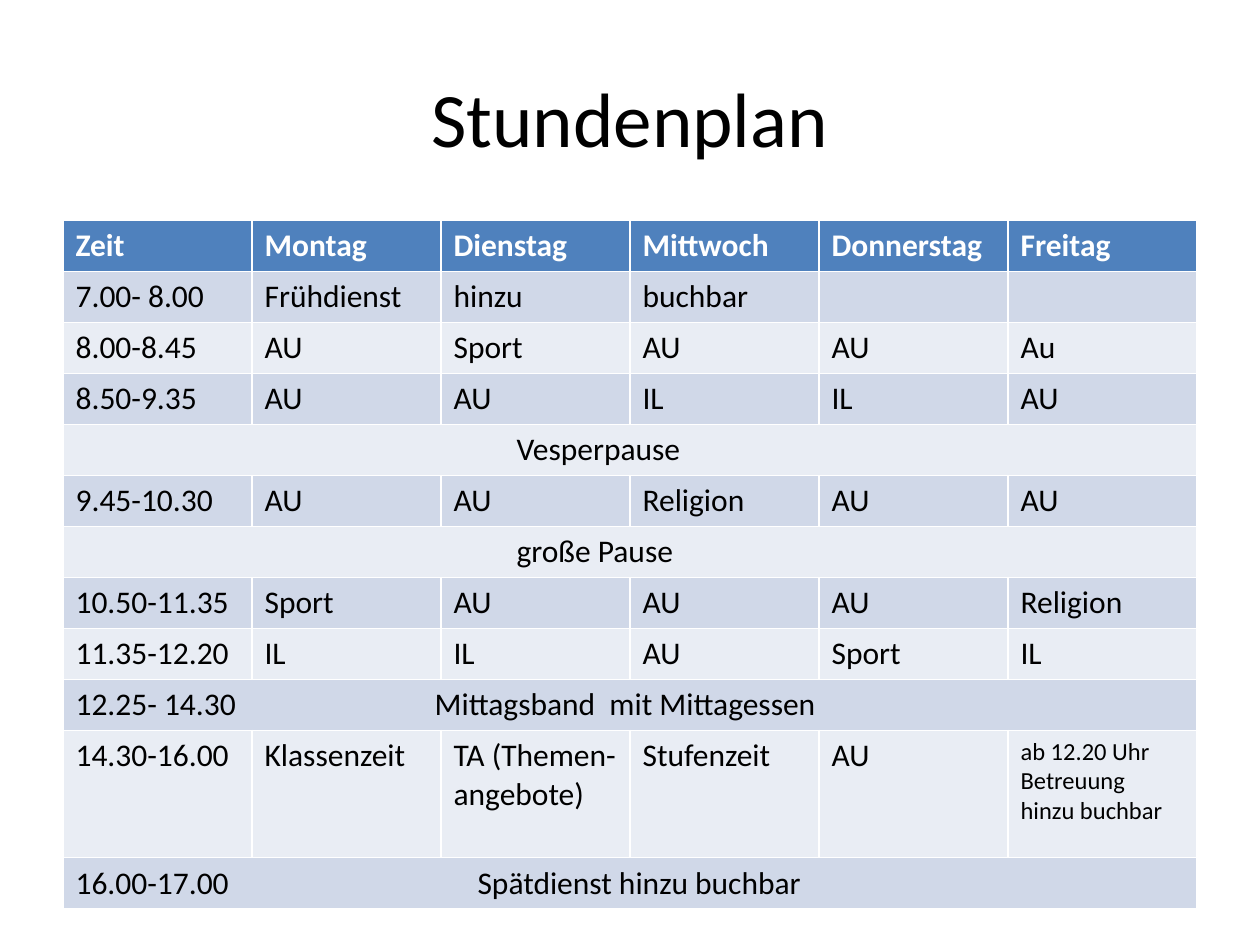
from lxml import etree
from pptx import Presentation
from pptx import util as u
from pptx.dml.color import RGBColor
from pptx.enum import text
from pptx.oxml.ns import qn

WIDTH, HEIGHT = 10, 7.5
FONT = "Calibri"
COLORS = {
    "header": "4F81BD",
    "dark_band": "D0D8E8",
    "light_band": "E9EDF4",
    "ink": "000000",
    "white": "FFFFFF",
}
ROW_HEIGHT, TALL_ROW_HEIGHT = 0.405, 1.01
TALL_ROW = 10
SMALL_NOTE = "ab 12.20 Uhr Betreuung hinzu buchbar"

DAYS = ["Zeit", "Montag", "Dienstag", "Mittwoch", "Donnerstag", "Freitag"]
# A list is a row of lessons; a tuple is a merged row: time, label, label offset
TIMETABLE = [
    DAYS,
    ["7.00- 8.00", "Frühdienst", "hinzu", "buchbar", "", ""],
    ["8.00-8.45", "AU", "Sport", "AU", "AU", "Au"],
    ["8.50-9.35", "AU", "AU", "IL", "IL", "AU"],
    ("", "Vesperpause", 3.5),
    ["9.45-10.30", "AU", "AU", "Religion", "AU", "AU"],
    ("", "große Pause", 3.5),
    ["10.50-11.35", "Sport", "AU", "AU", "AU", "Religion"],
    ["11.35-12.20", "IL", "IL", "AU", "Sport", "IL"],
    ("12.25- 14.30", "Mittagsband  mit Mittagessen", 2.85),
    ["14.30-16.00", "Klassenzeit", "TA (Themen-angebote)", "Stufenzeit", "AU",
     SMALL_NOTE],
    ("16.00-17.00", "Spätdienst hinzu buchbar", 3.19),
]


def write(frame, words, size=18, color="ink", bold=False, align=None):
    """Put one formatted paragraph into a text frame and return it."""
    para = frame.paragraphs[0]
    para.alignment = align
    span = para.add_run()
    span.text = words
    span.font.name = FONT
    span.font.size = u.Pt(size)
    span.font.bold = bold
    span.font.color.rgb = RGBColor.from_string(COLORS[color])
    return para


def offset_label(para, offset, after_time):
    """Start the label at an offset: by a tab stop after a time, else by a margin."""
    properties = para._p.get_or_add_pPr()
    position = str(u.Inches(offset))
    if after_time:
        tabs = etree.SubElement(properties, qn("a:tabLst"))
        etree.SubElement(tabs, qn("a:tab"), pos=position, algn="l")
    else:
        properties.set("marL", position)


def add_title(page, left, top, width, height):
    box = page.shapes.add_textbox(*map(u.Inches, (left, top, width, height)))
    box.text_frame.word_wrap = True
    box.text_frame.vertical_anchor = text.MSO_ANCHOR.MIDDLE
    write(box.text_frame, "Stundenplan", size=44, align=text.PP_ALIGN.CENTER)


def add_timetable(page, left, top, width):
    height = ROW_HEIGHT * (len(TIMETABLE) - 1) + TALL_ROW_HEIGHT
    table = page.shapes.add_table(
        len(TIMETABLE), len(DAYS), *map(u.Inches, (left, top, width, height))
    ).table

    for column in table.columns:
        column.width = u.Inches(width / len(DAYS))

    for number, entry in enumerate(TIMETABLE):
        is_header = number == 0
        row = table.rows[number]
        row.height = u.Inches(TALL_ROW_HEIGHT if number == TALL_ROW else ROW_HEIGHT)

        # Header and alternating bands
        band = "header" if is_header else ("light_band", "dark_band")[number % 2]
        for cell in row.cells:
            cell.fill.solid()
            cell.fill.fore_color.rgb = RGBColor.from_string(COLORS[band])

        # Breaks and care times span the whole week
        if isinstance(entry, tuple):
            time, label, offset = entry
            first = table.cell(number, 0)
            first.merge(table.cell(number, len(DAYS) - 1))
            para = write(first.text_frame, f"{time}\t{label}" if time else label)
            offset_label(para, offset, after_time=bool(time))
            continue

        # Lessons by day
        for cell, words in zip(row.cells, entry):
            if words:
                write(cell.text_frame, words, size=14 if words == SMALL_NOTE else 18,
                      color="white" if is_header else "ink", bold=is_header)


def main():
    deck = Presentation()
    deck.slide_width, deck.slide_height = u.Inches(WIDTH), u.Inches(HEIGHT)
    page = deck.slides.add_slide(deck.slide_layouts[6])
    margin = WIDTH * 0.05
    content_width = WIDTH - 2 * margin
    add_title(page, margin, HEIGHT * 0.04, content_width, HEIGHT / 6)
    add_timetable(page, margin, 1.75, content_width)
    deck.save("out.pptx")


if __name__ == "__main__":
    main()
